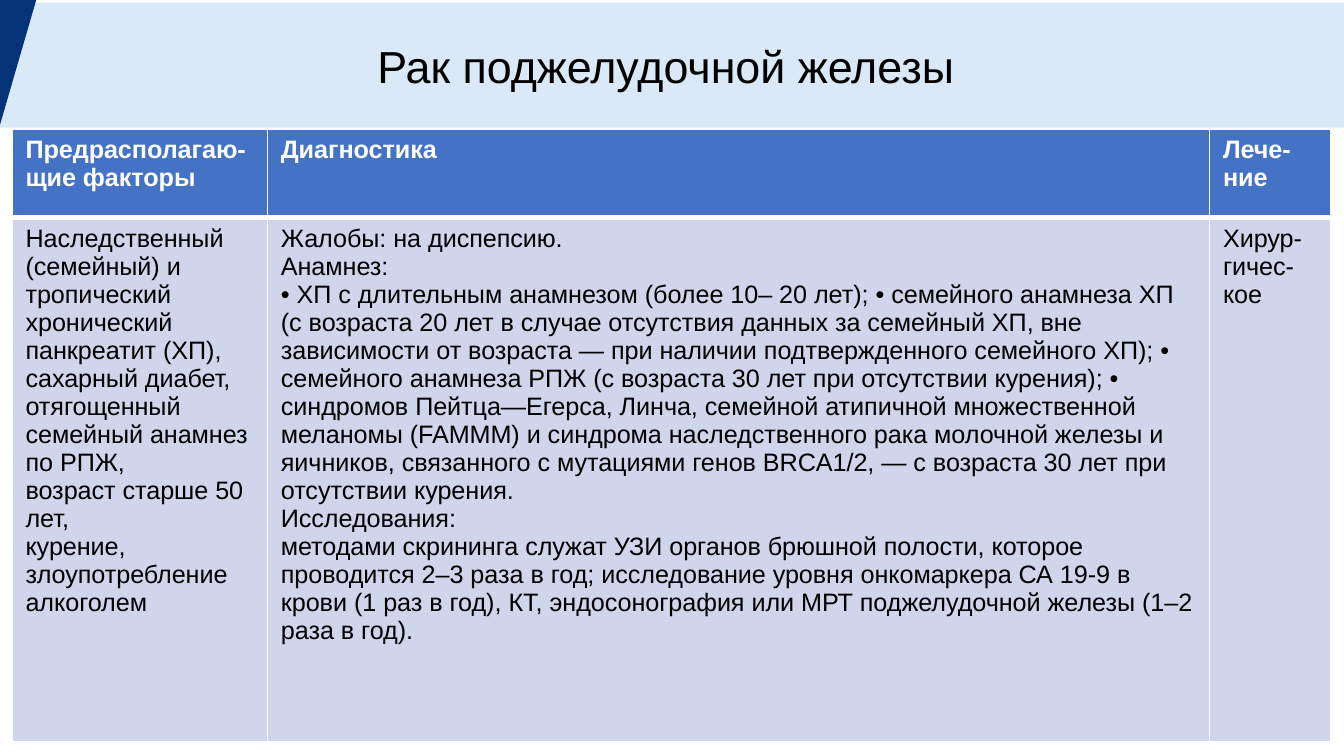
import lxml.etree
import pptx
import pptx.dml.color
import pptx.enum.shapes
import pptx.enum.text
import pptx.oxml.ns
import pptx.util

Inches = pptx.util.Inches
Pt = pptx.util.Pt
RGBColor = pptx.dml.color.RGBColor
qn = pptx.oxml.ns.qn
Align = pptx.enum.text.PP_ALIGN
Anchor = pptx.enum.text.MSO_ANCHOR

PALE = RGBColor(0xD9, 0xE9, 0xF7)
NAVY = RGBColor(0x04, 0x33, 0x77)
BLUE = RGBColor(0x44, 0x72, 0xC4)
LILAC = RGBColor(0xCF, 0xD5, 0xEA)
WHITE = RGBColor(0xFF, 0xFF, 0xFF)
BLACK = RGBColor(0, 0, 0)

BASE = {"name": "Arial", "bold": False}
TITLE = BASE | {"size": Pt(24)}
HEAD = BASE | {"size": Pt(13.5), "bold": True}
BODY = BASE | {"size": Pt(13.5)}

WIDTHS = [1.9, 7.01, 0.9]
HEIGHTS = [0.66, 3.9]
HEADS = ["Предрасполагаю-щие факторы", "Диагностика", "Лече-ние"]
CAUSES = [
    "Наследственный (семейный) и тропический хронический панкреатит (ХП),",
    "сахарный диабет,",
    "отягощенный семейный анамнез по РПЖ,",
    "возраст старше 50 лет,",
    "курение,",
    "злоупотребление алкоголем",
]
TESTS = [
    "Жалобы: на диспепсию.",
    "Анамнез:",
    "• ХП с длительным анамнезом (более 10– 20 лет); "
    "• семейного анамнеза ХП (с возраста 20 лет в случае отсутствия данных "
    "за семейный ХП, вне зависимости от возраста — при наличии "
    "подтвержденного семейного ХП); "
    "• семейного анамнеза РПЖ (с возраста 30 лет при отсутствии курения); "
    "• синдромов Пейтца—Егерса, Линча, семейной атипичной множественной "
    "меланомы (FAMMM) и синдрома наследственного рака молочной железы и "
    "яичников, связанного с мутациями генов BRCA1/2, — с возраста 30 лет "
    "при отсутствии курения.",
    "Исследования:",
    "методами скрининга служат УЗИ органов брюшной полости, которое "
    "проводится 2–3 раза в год; исследование уровня онкомаркера СА 19-9 в "
    "крови (1 раз в год), КТ, эндосонография или МРТ поджелудочной железы "
    "(1–2 раза в год).",
]
CURE = ["Хирур-гичес-кое"]


def write(frame, lines, form, color, align=Align.LEFT):
    for i, line in enumerate(lines):
        para = frame.paragraphs[0] if i == 0 else frame.add_paragraph()
        para.alignment = align
        run = para.add_run()
        run.text = line
        for key, value in form.items():
            setattr(run.font, key, value)
        run.font.color.rgb = color


def paint(shape, color):
    shape.shadow.inherit = False
    shape.fill.solid()
    shape.fill.fore_color.rgb = color
    shape.line.fill.background()


def add_title(slide, text):
    kind = pptx.enum.shapes.MSO_SHAPE.RECTANGLE
    band = slide.shapes.add_shape(
        kind, Inches(0), Inches(0.02), Inches(10), Inches(0.93))
    paint(band, PALE)
    band.text_frame.word_wrap = True
    band.text_frame.vertical_anchor = Anchor.MIDDLE
    write(band.text_frame, [text], TITLE, BLACK, Align.CENTER)


def add_wedge(slide):
    pen = slide.shapes.build_freeform(Inches(0), Inches(0.93))
    pen.add_line_segments([(0, 0), (Inches(0.27), 0)], close=True)
    paint(pen.convert_to_shape(), NAVY)


def edge(cell, sides):
    """Draw white cell borders; sides maps a tag to a width in points."""
    props = cell._tc.get_or_add_tcPr()
    for tag, width in sides.items():
        line = lxml.etree.SubElement(props, qn(f"a:{tag}"), w=str(Pt(width)))
        fill = lxml.etree.SubElement(line, qn("a:solidFill"))
        lxml.etree.SubElement(fill, qn("a:srgbClr"), val=str(WHITE))


def fill_cell(cell, lines, form, ink, back, top, base):
    edge(cell, {"lnL": 1, "lnR": 1, "lnT": top, "lnB": base})
    cell.fill.solid()
    cell.fill.fore_color.rgb = back
    write(cell.text_frame, lines, form, ink)


def add_grid(slide):
    grid = slide.shapes.add_table(
        len(HEIGHTS), len(WIDTHS), Inches(0.09), Inches(0.96),
        Inches(sum(WIDTHS)), Inches(sum(HEIGHTS))).table
    for col, width in zip(grid.columns, WIDTHS):
        col.width = Inches(width)
    for row, height in zip(grid.rows, HEIGHTS):
        row.height = Inches(height)
    for i, (head, lines) in enumerate(zip(HEADS, [CAUSES, TESTS, CURE])):
        fill_cell(grid.cell(0, i), [head], HEAD, WHITE, BLUE, 1, 3)
        fill_cell(grid.cell(1, i), lines, BODY, BLACK, LILAC, 3, 1)


def main():
    deck = pptx.Presentation()
    deck.slide_width = Inches(10)
    deck.slide_height = Inches(10 * 9 / 16)
    slide = deck.slides.add_slide(deck.slide_layouts[6])
    add_title(slide, "Рак поджелудочной железы ")
    add_wedge(slide)
    add_grid(slide)
    deck.save("out.pptx")


if __name__ == "__main__":
    main()
